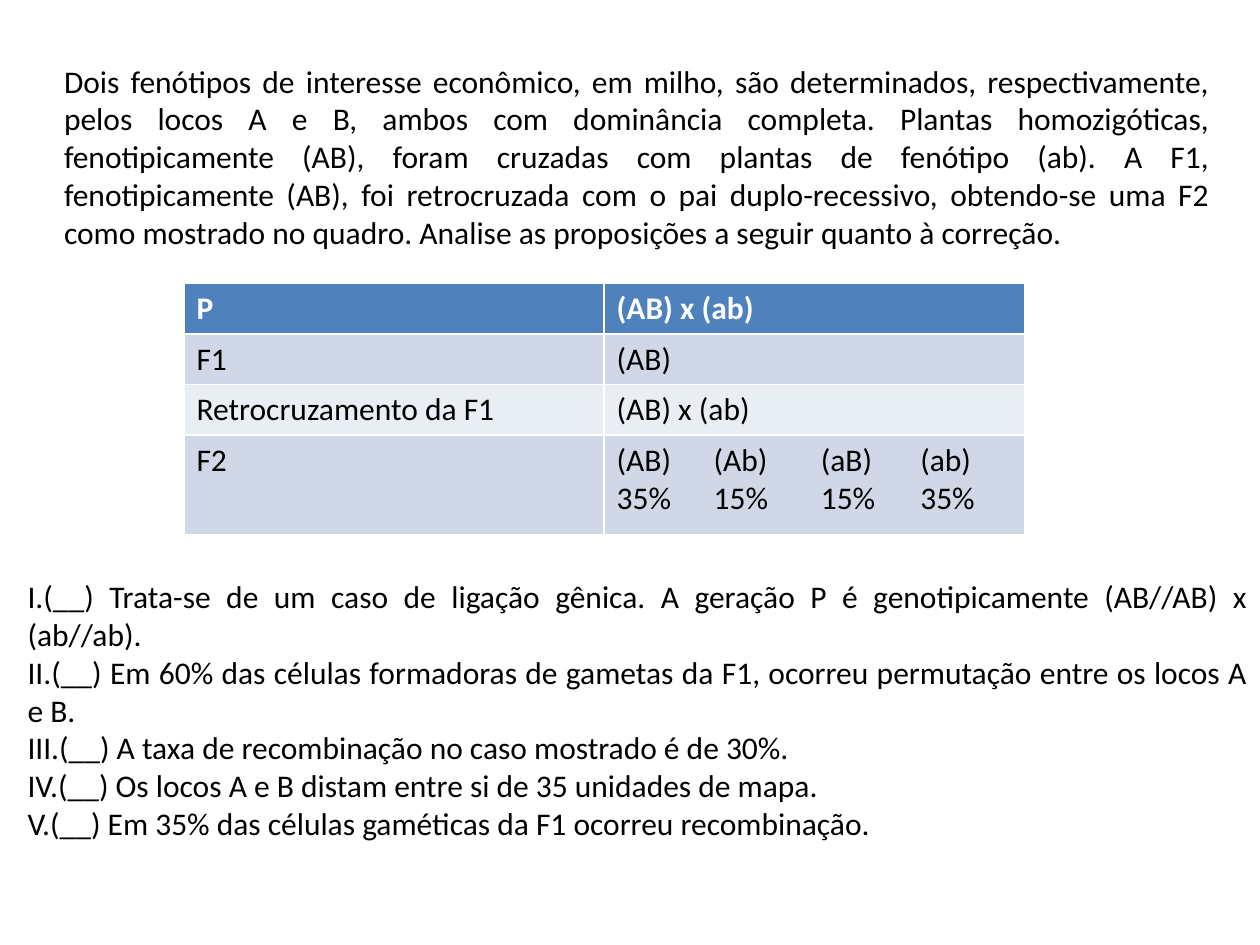
from lxml import etree
from pptx import Presentation
from pptx.dml.color import RGBColor
from pptx.enum.shapes import MSO_SHAPE
from pptx.enum.text import MSO_ANCHOR, PP_ALIGN
from pptx.oxml.ns import qn
from pptx.util import Inches, Pt

RECTANGLE = MSO_SHAPE.RECTANGLE
MIDDLE = MSO_ANCHOR.MIDDLE
LEFT, JUSTIFY = PP_ALIGN.LEFT, PP_ALIGN.JUSTIFY
BLACK = RGBColor(0x00, 0x00, 0x00)
WHITE = RGBColor(0xFF, 0xFF, 0xFF)
BLUE = RGBColor(0x4F, 0x81, 0xBD)
BAND_DARK = RGBColor(0xD0, 0xD8, 0xE8)
BAND_LIGHT = RGBColor(0xE9, 0xED, 0xF4)

QUESTION = (
    "Dois fenótipos de interesse econômico, em milho, são determinados, "
    "respectivamente, pelos locos A e B, ambos com dominância completa. "
    "Plantas homozigóticas, fenotipicamente (AB), foram cruzadas com plantas "
    "de fenótipo (ab). A F1, fenotipicamente (AB), foi retrocruzada com o pai "
    "duplo-recessivo, obtendo-se uma F2 como mostrado no quadro. Analise as "
    "proposições a seguir quanto à correção."
)
PROPOSITIONS = [
    "I.(__) Trata-se de um caso de ligação gênica. A geração P é "
    "genotipicamente (AB//AB) x (ab//ab).",
    "II.(__) Em 60% das células formadoras de gametas da F1, ocorreu "
    "permutação entre os locos A e B.",
    "III.(__) A taxa de recombinação no caso mostrado é de 30%.",
    "IV.(__) Os locos A e B distam entre si de 35 unidades de mapa.",
    "V.(__) Em 35% das células gaméticas da F1 ocorreu recombinação.",
]
CROSSES = [
    ("P", "(AB) x (ab)"),
    ("F1", "(AB)"),
    ("Retrocruzamento da F1", "(AB) x (ab)"),
    ("F2", "(AB)\t(Ab)\t(aB)\t(ab)\n35%\t15%\t15%\t35%"),
]
GAMETE_TABS = (0.77, 1.62, 2.41)


class SlideBuilder:
    """Hold the text style and the current slide, placing items by shares (%) of its size."""

    def __init__(self, prs, font="Calibri", size=18):
        self.prs, self.font, self.size = prs, font, size
        self.s = prs.slides.add_slide(prs.slide_layouts[6])

    def place(self, x, y, w, h):
        width, height = self.prs.slide_width, self.prs.slide_height
        return [int(share * side / 100) for share, side in
                ((x, width), (y, height), (w, width), (h, height))]

    def fill_text(self, tf, lines, align=LEFT, color=BLACK, bold=False, tabs=()):
        tf.word_wrap = True
        for i, line in enumerate(lines):
            p = tf.add_paragraph() if i else tf.paragraphs[0]
            p.text = line
            p.alignment = align
            if tabs:
                tab_list = etree.SubElement(p._p.get_or_add_pPr(), qn("a:tabLst"))
                for stop in tabs:
                    etree.SubElement(tab_list, qn("a:tab"), pos=str(Inches(stop)), algn="l")
            p.font.name, p.font.size = self.font, Pt(self.size)
            p.font.bold, p.font.color.rgb = bold, color

    def panel(self, area, lines):
        sp = self.s.shapes.add_shape(RECTANGLE, *self.place(*area))
        sp.shadow.inherit = False
        sp.fill.solid()
        sp.fill.fore_color.rgb = WHITE
        sp.line.fill.background()
        sp.text_frame.vertical_anchor = MIDDLE
        self.fill_text(sp.text_frame, lines, JUSTIFY)

    def text(self, area, lines):
        box = self.s.shapes.add_textbox(*self.place(*area))
        self.fill_text(box.text_frame, lines, JUSTIFY)

    def table(self, area, rows, tabs):
        frame = self.s.shapes.add_table(len(rows), len(rows[0]), *self.place(*area))
        line_counts = [max(text.count("\n") + 1 for text in row) for row in rows]
        unit = frame.height // sum(line_counts)
        for i, (row, count) in enumerate(zip(rows, line_counts)):
            frame.table.rows[i].height = unit * count
            header = i == 0
            fill = BLUE if header else (BAND_LIGHT, BAND_DARK)[i % 2]
            for j, text in enumerate(row):
                cell = frame.table.cell(i, j)
                cell.fill.solid()
                cell.fill.fore_color.rgb = fill
                self.fill_text(cell.text_frame, text.split("\n"),
                               color=WHITE if header else BLACK, bold=header,
                               tabs=tabs if "\t" in text else ())


def main():
    prs = Presentation()
    prs.slide_width, prs.slide_height = Inches(10), Inches(7.5)
    slide = SlideBuilder(prs)
    slide.text((4.1, 5.87, 92.9, 21.6), [QUESTION])
    slide.panel((1.2, 60.27, 98.8, 29.6), PROPOSITIONS)
    slide.table((14.6, 30, 66.7, 26.4), CROSSES, GAMETE_TABS)
    prs.save("out.pptx")


if __name__ == "__main__":
    main()
